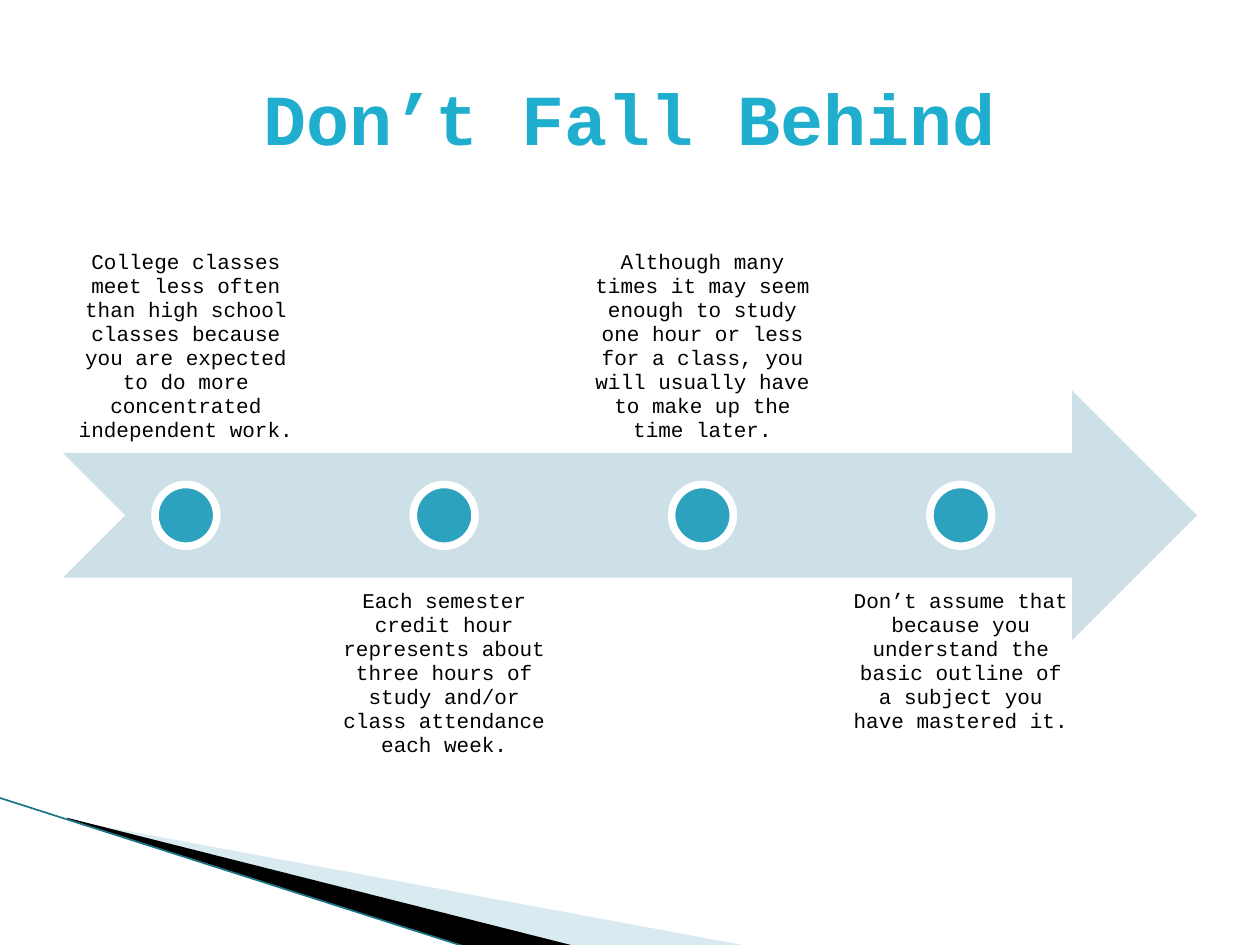
"""Build the "Don't Fall Behind" timeline slide."""
from lxml import etree
from pptx import Presentation
from pptx.dml.color import RGBColor
from pptx.enum.shapes import MSO_CONNECTOR, MSO_SHAPE
from pptx.enum.text import MSO_ANCHOR, PP_ALIGN
from pptx.oxml.ns import qn
from pptx.util import Inches, Pt

TOP, MIDDLE, BOTTOM = MSO_ANCHOR.TOP, MSO_ANCHOR.MIDDLE, MSO_ANCHOR.BOTTOM
CENTER = PP_ALIGN.CENTER
ARROW, OVAL = MSO_SHAPE.NOTCHED_RIGHT_ARROW, MSO_SHAPE.OVAL
STRAIGHT = MSO_CONNECTOR.STRAIGHT

FONT = "Courier New"
BLACK = RGBColor(0x00, 0x00, 0x00)
WHITE = RGBColor(0xFF, 0xFF, 0xFF)
TITLE_BLUE = RGBColor(0x1F, 0xAE, 0xCD)
TEAL = RGBColor(0x2D, 0xA2, 0xBF)
DARK_TEAL = RGBColor(0x1A, 0x73, 0x87)
PALE_BLUE = RGBColor(0xCD, 0xE0, 0xE8)
SWOOSH_BLUE = RGBColor(0xA0, 0xCB, 0xDC)

TITLE = "Don’t Fall Behind"
STEPS = [
    "College classes meet less often than high school classes because you are "
    "expected to do more concentrated independent work.",
    "Each semester credit hour represents about three hours of study and/or "
    "class attendance each week.",
    "Although many times it may seem enough to study one hour or less for a "
    "class, you will usually have to make up the time later.",
    "Don’t assume that because you understand the basic outline of a subject "
    "you have mastered it.",
]
SWOOSHES = [
    ([(0.55, 6.51), (5.95, 7.51), (4.56, 7.51), (0.55, 6.5)], SWOOSH_BLUE, 40),
    ([(0.53, 6.49), (4.57, 7.51), (3.72, 7.52), (0.54, 6.5)], BLACK, 100),
]

LEFT, ARROW_TOP, ARROW_W, BAND = 0.5, 3.1, 9, 1.98
STEP_W, PITCH, DOT = 1.95, 2.05, 0.49
ABOVE, BELOW = 1.62, 4.59


def paint(sp, fill, line=None, width=0):
    sp.shadow.inherit = False
    sp.fill.solid()
    sp.fill.fore_color.rgb = fill
    if line is None:
        sp.line.fill.background()
    else:
        sp.line.color.rgb = line
        sp.line.width = Pt(width)


def add_text(s, text, box, size, color, bold=False, anchor=TOP, inset=0.09, spacing=1.0):
    tf = s.shapes.add_textbox(*map(Inches, box)).text_frame
    tf.word_wrap = True
    tf.vertical_anchor = anchor
    tf.margin_left = tf.margin_right = tf.margin_top = tf.margin_bottom = Inches(inset)
    p = tf.paragraphs[0]
    p.alignment = CENTER
    p.line_spacing = spacing
    r = p.add_run()
    r.text = text
    r.font.name, r.font.size, r.font.bold = FONT, Pt(size), bold
    r.font.color.rgb = color


def add_swoosh(s, points, color, opacity):
    points = [(Inches(x), Inches(y)) for x, y in points]
    builder = s.shapes.build_freeform(*points[0])
    builder.add_line_segments(points[1:], close=True)
    sp = builder.convert_to_shape()
    paint(sp, color)
    if opacity < 100:
        clr = sp._element.spPr.find(qn("a:solidFill"))[0]
        etree.SubElement(clr, qn("a:alpha")).set("val", str(opacity * 1000))


def add_edge(s):
    ends = map(Inches, (-0.01, 6.33, 3.71, 7.52))
    line = s.shapes.add_connector(STRAIGHT, *ends)
    line.line.color.rgb = DARK_TEAL
    line.line.width = Pt(0.95)
    etree.SubElement(line._element.spPr, qn("a:effectLst"))


def add_timeline(s):
    box = (LEFT, ARROW_TOP, ARROW_W, BAND)
    paint(s.shapes.add_shape(ARROW, *map(Inches, box)), PALE_BLUE)
    for i, text in enumerate(STEPS):
        x = LEFT + i * PITCH
        top, anchor = (BELOW, TOP) if i % 2 else (ABOVE, BOTTOM)
        add_text(s, text, (x, top, STEP_W, BAND), 12, BLACK, anchor=anchor, spacing=0.95)
        dot = (x + (STEP_W - DOT) / 2, ARROW_TOP + (BAND - DOT) / 2, DOT, DOT)
        paint(s.shapes.add_shape(OVAL, *map(Inches, dot)), TEAL, WHITE, 4.33)


def main():
    prs = Presentation()
    prs.slide_width, prs.slide_height = Inches(10), Inches(7.5)
    s = prs.slides.add_slide(prs.slide_layouts[6])
    for swoosh in SWOOSHES:
        add_swoosh(s, *swoosh)
    add_edge(s)
    add_timeline(s)
    add_text(s, TITLE, (0.5, 0.3, 9, 1.25), 41, TITLE_BLUE, bold=True, anchor=MIDDLE)
    prs.save("out.pptx")


if __name__ == "__main__":
    main()
